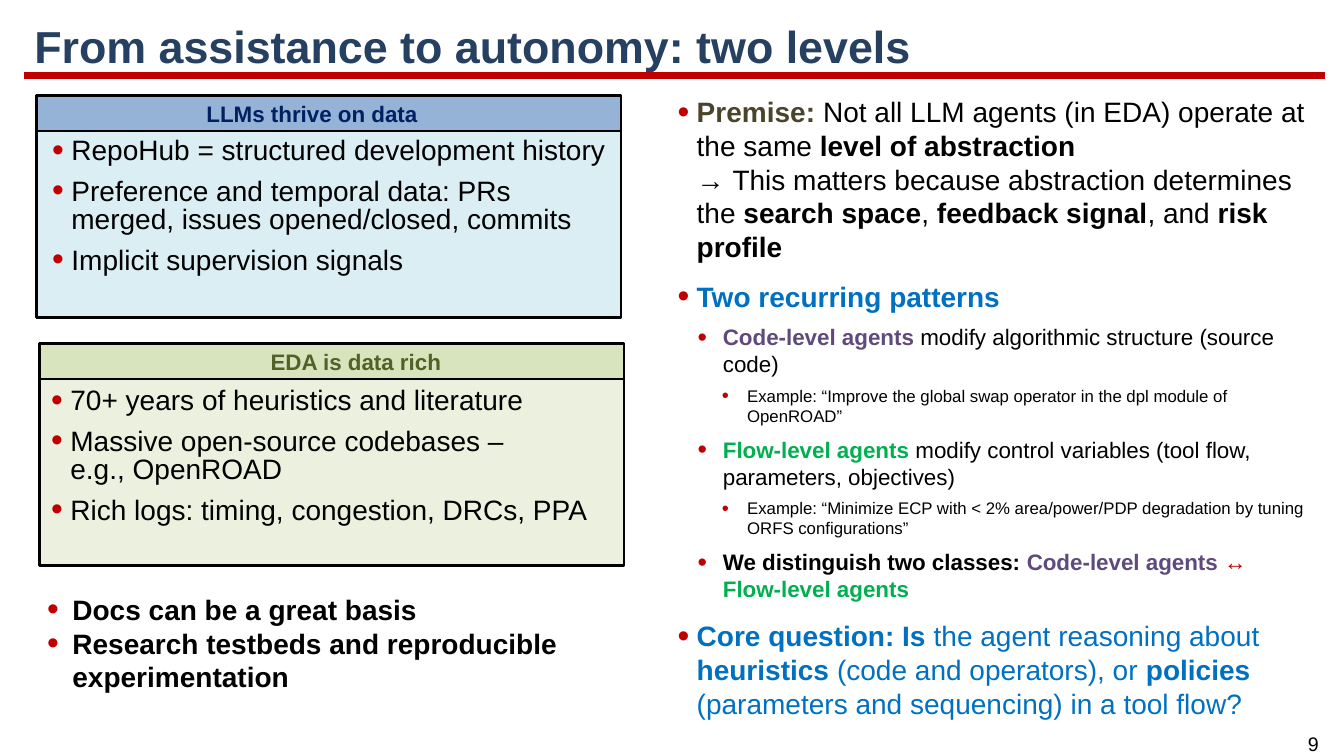
from dataclasses import dataclass

from lxml.etree import SubElement
from pptx import Presentation
from pptx.dml.color import RGBColor
from pptx.enum.shapes import MSO_CONNECTOR, MSO_SHAPE
from pptx.enum.text import MSO_ANCHOR, MSO_AUTO_SIZE, PP_ALIGN
from pptx.oxml.ns import qn
from pptx.util import Inches, Pt


@dataclass(frozen=True)
class Theme:
    font: str = "Arial"
    black: str = "000000"
    red: str = "C00000"
    title: str = "254061"
    olive: str = "4A452A"
    blue: str = "0070C0"
    purple: str = "604A7B"
    green: str = "00B050"
    title_size: int = 32
    large: int = 20
    medium: int = 16
    number_size: int = 14
    small: int = 12


THEME = Theme()

TITLE = "From assistance to autonomy: two levels"
PAGE_NUMBER = "9"

PANELS = [
    {
        "left": 0.36, "top": 0.95, "heading": "LLMs thrive on data",
        "heading_left": 1.95, "heading_align": PP_ALIGN.LEFT,
        "heading_colour": "002060", "header_fill": "95B3D7", "body_fill": "DBEEF4",
        "list_at": (0.36, 1.32),
        "points": [
            "RepoHub = structured development history",
            "Preference and temporal data: PRs merged, issues opened/closed, commits",
            "Implicit supervision signals",
        ],
    },
    {
        "left": 0.39, "top": 3.41, "heading": "EDA is data rich",
        "heading_left": 2.31, "heading_align": PP_ALIGN.CENTER,
        "heading_colour": "4F6228", "header_fill": "D7E4BD", "body_fill": "EBF1DE",
        "list_at": (0.35, 3.8),
        "points": [
            "70+ years of heuristics and literature",
            "Massive open-source codebases – \ne.g., OpenROAD",
            "Rich logs: timing, congestion, DRCs, PPA",
        ],
    },
]

TAKEAWAYS = [
    "Docs can be a great basis",
    "Research testbeds and reproducible experimentation",
]

ARGUMENT = [
    (0, [("Premise:", THEME.olive, True),
         (" Not all LLM agents (in EDA) operate at the same ", THEME.black, False),
         ("level of abstraction\n→ ", THEME.black, True),
         ("This matters because abstraction determines the ", THEME.black, False),
         ("search space", THEME.black, True), (", ", THEME.black, False),
         ("feedback signal", THEME.black, True), (", and ", THEME.black, False),
         ("risk profile", THEME.black, True)]),
    (0, [("Two recurring patterns", THEME.blue, True)]),
    (1, [("Code-level agents ", THEME.purple, True),
         ("modify algorithmic structure (source code)", THEME.black, False)]),
    (2, [("Example: “Improve the global swap operator in the dpl module of OpenROAD”",
          THEME.black, False)]),
    (1, [("Flow-level agents ", THEME.green, True),
         ("modify control variables (tool flow, parameters, objectives)", THEME.black, False)]),
    (2, [("Example: “Minimize ECP with < 2% area/power/PDP degradation by tuning "
          "ORFS configurations”", THEME.black, False)]),
    (1, [("We distinguish two classes: ", THEME.black, True),
         ("Code-level agents ", THEME.purple, True), ("↔ ", THEME.red, True),
         ("Flow-level agents", THEME.green, True)]),
    (0, [("Core question: Is", THEME.blue, True),
         (" the agent reasoning about ", THEME.blue, False),
         ("heuristics", THEME.blue, True),
         (" (code and operators), or ", THEME.blue, False),
         ("policies", THEME.blue, True),
         (" (parameters and sequencing) in a tool flow?", THEME.blue, False)]),
]

LEVELS = [
    {"size": THEME.large, "margin": 0.25, "hanging": 0.19, "before": 12},
    {"size": THEME.medium, "margin": 0.51, "hanging": 0.25, "before": 7.2},
    {"size": THEME.small, "margin": 0.75, "hanging": 0.25, "before": 6},
]


def style(span, size, colour, bold=False):
    span.font.name = THEME.font
    span.font.size = Pt(size)
    span.font.bold = bold
    span.font.color.rgb = RGBColor.from_string(colour)


def place(box, left, top, width, height):
    box.left, box.top = Inches(left), Inches(top)
    box.width, box.height = Inches(width), Inches(height)


def add_bullet(para, margin, hanging):
    properties = para._p.get_or_add_pPr()
    properties.set("marL", str(Inches(margin)))
    properties.set("indent", str(-Inches(hanging)))
    colour = SubElement(properties, qn("a:buClr"))
    SubElement(colour, qn("a:srgbClr"), val=THEME.red)
    SubElement(properties, qn("a:buSzPct"), val="120000")
    SubElement(properties, qn("a:buFont"), typeface=THEME.font)
    SubElement(properties, qn("a:buChar"), char="•")


def write_list(frame, items, spacing=1.0):
    frame.word_wrap = True
    frame.auto_size = MSO_AUTO_SIZE.NONE
    for index, (level, pieces) in enumerate(items):
        para = frame.add_paragraph() if index else frame.paragraphs[0]
        para.level = level["depth"]
        para.line_spacing = spacing
        para.space_before = Pt(level["before"] if index else 0)
        add_bullet(para, level["margin"], level["hanging"])
        for text, colour, bold in pieces:
            for part, line in enumerate(text.split("\n")):
                if part:
                    para.add_line_break()
                span = para.add_run()
                span.text = line
                style(span, level["size"], colour, bold)


def add_label(shapes, text, at, size, colour, align, bold=False):
    box = shapes.add_textbox(*map(Inches, at))
    box.text_frame.text = text
    para = box.text_frame.paragraphs[0]
    para.alignment = align
    style(para.runs[0], size, colour, bold)


def add_block(shapes, at, fill):
    block = shapes.add_shape(MSO_SHAPE.RECTANGLE, *map(Inches, at))
    block.shadow.inherit = False
    block.fill.solid()
    block.fill.fore_color.rgb = RGBColor.from_string(fill)
    block.line.color.rgb = RGBColor.from_string(THEME.black)
    block.line.width = Pt(2)


def add_panel(page, panel):
    shapes = page.shapes.add_group_shape().shapes
    left, top, width, header = panel["left"], panel["top"], 5.8, 0.35
    add_block(shapes, (left, top + header, width, 1.85), panel["body_fill"])
    add_block(shapes, (left, top, width, header), panel["header_fill"])
    add_label(shapes, panel["heading"], (panel["heading_left"], top - 0.01, 2.44, 0.37),
              THEME.medium, panel["heading_colour"], panel["heading_align"], True)
    box = shapes.add_textbox(*map(Inches, (*panel["list_at"], width, 1.76)))
    level = {**LEVELS[0], "depth": 0, "before": 8.4}
    write_list(box.text_frame,
               [(level, [(point, THEME.black, False)]) for point in panel["points"]], 0.85)


def add_title(page):
    rule = page.shapes.add_connector(
        MSO_CONNECTOR.STRAIGHT, *map(Inches, (0.24, 0.75, 13.14, 0.75)))
    rule.line.color.rgb = RGBColor.from_string(THEME.red)
    rule.line.width = Pt(4.5)
    SubElement(rule._element.spPr, qn("a:effectLst"))
    title = page.shapes.title
    place(title, 0.24, 0.16, 12.91, 0.65)
    frame = title.text_frame
    frame.text = TITLE
    frame.auto_size = MSO_AUTO_SIZE.NONE
    frame.vertical_anchor = MSO_ANCHOR.MIDDLE
    para = frame.paragraphs[0]
    para.alignment = PP_ALIGN.LEFT
    para.line_spacing = 0.9
    style(para.runs[0], THEME.title_size, THEME.title, True)


def main():
    """Build the slide on two levels of agent autonomy."""
    deck = Presentation()
    deck.slide_width, deck.slide_height = Inches(13.33), Inches(7.5)
    page = deck.slides.add_slide(deck.slide_layouts[1])
    add_title(page)
    body = page.placeholders[1]
    place(body, 6.56, 0.89, 6.51, 6.3)
    write_list(body.text_frame,
               [({**LEVELS[depth], "depth": depth}, pieces) for depth, pieces in ARGUMENT])
    for panel in PANELS:
        add_panel(page, panel)
    box = page.shapes.add_textbox(*map(Inches, (0.36, 5.83, 6.13, 1.62)))
    level = {"depth": 0, "size": THEME.large, "margin": 0.26, "hanging": 0.25, "before": 0}
    write_list(box.text_frame, [(level, [(text, THEME.black, True)]) for text in TAKEAWAYS])
    add_label(page.shapes, PAGE_NUMBER, (12.73, 7.21, 0.59, 0.34),
              THEME.number_size, THEME.black, PP_ALIGN.CENTER)
    deck.save("out.pptx")


if __name__ == "__main__":
    main()
